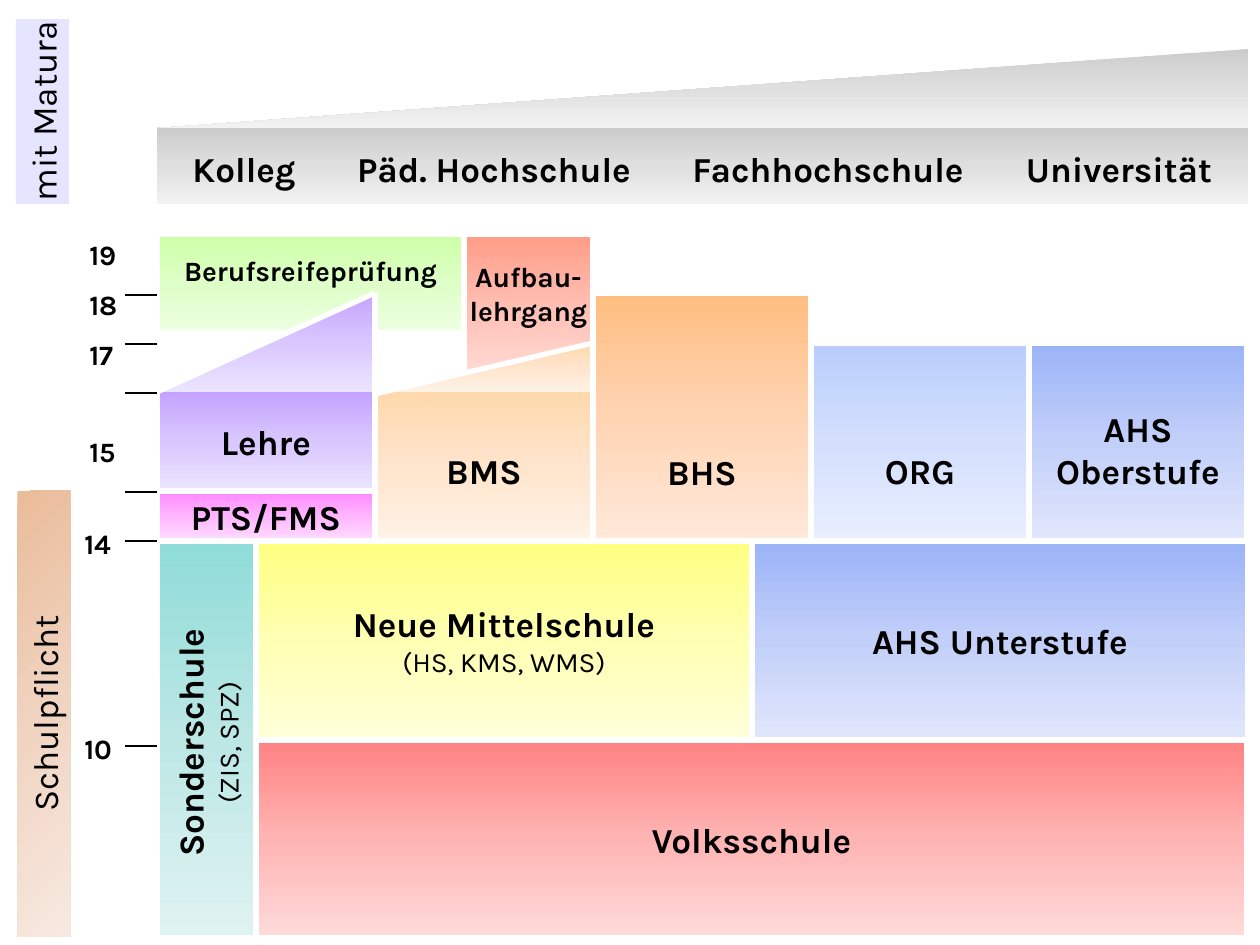
"""Build a one-slide diagram of the Austrian school system."""
from copy import deepcopy
from dataclasses import dataclass

from pptx import Presentation
from pptx import util as u
from pptx.dml import color
from pptx.enum import shapes, text
from pptx.oxml import ns, xmlchemy

SCALE = 914400 / 126
RECT = shapes.MSO_SHAPE.RECTANGLE
TRIANGLE = shapes.MSO_SHAPE.RIGHT_TRIANGLE
TOP, MIDDLE, BOTTOM = text.MSO_ANCHOR.TOP, text.MSO_ANCHOR.MIDDLE, text.MSO_ANCHOR.BOTTOM
LEFT, CENTER = text.PP_ALIGN.LEFT, text.PP_ALIGN.CENTER


@dataclass(frozen=True)
class Theme:
    font: str = "Karla"
    large: int = 20
    small: int = 16
    ink: str = "000000"
    gap: str = "FFFFFF"
    gap_width: float = 3
    tick_width: float = 0.75
    lavender: tuple = ("E5E5FF",)
    grey: tuple = ("CCCCCC", "DFDFDF", "F2F2F2")
    green: tuple = ("CCFFA6", "DEFFC7", "EEFFE3")
    coral: tuple = ("FF9C86", "FFC2B7", "FFE1DC")
    pink: tuple = ("FF85FF", "FFB6FF", "FFDCFF")
    violet: tuple = ("C4A3FF", "D9C7FF", "ECE4FF")
    orange: tuple = ("FFBD80", "FFD4B3", "FFE9DA")
    peach: tuple = ("FFD8AD", "FFE5CD", "FFF2E6")
    blue: tuple = ("9BB3F7", "C2CFF9", "E1E7FB")
    sky: tuple = ("B9CEFC", "D3DFFD", "E9EFFE")
    tan: tuple = ("EABB99", "F0D4C1", "F7E9E1")
    teal: tuple = ("8FDCD8", "BCE7E5", "DFF3F2")
    red: tuple = ("FF8282", "FFB4B4", "FFDADA")
    yellow: tuple = ("FFFF80", "FFFFB3", "FFFFDA")


T = Theme()


@dataclass(frozen=True)
class Block:
    x: int
    y: int
    w: int
    h: int
    fill: tuple
    title: str = ""
    note: str = ""
    size: int = T.large
    bold: bool = True
    anchor: text.MSO_ANCHOR = MIDDLE
    inset: int = 6
    border: bool = True
    kind: shapes.MSO_SHAPE = RECT
    turn: int = 0
    angle: int = 270
    upward: bool = False


@dataclass(frozen=True)
class Label:
    x: int
    y: int
    w: int
    title: str
    size: int = T.small
    align: text.PP_ALIGN = LEFT


def px(n: float) -> u.Emu:
    """Turn pixels into EMU."""
    return u.Emu(round(n * SCALE))


def rgb(value: str) -> color.RGBColor:
    """Turn a hex string into a colour."""
    return color.RGBColor.from_string(value)


def paint(sp, colors: tuple, angle: int) -> None:
    """Fill a shape with one colour or a three-stop gradient."""
    if len(colors) == 1:
        sp.fill.solid()
        sp.fill.fore_color.rgb = rgb(colors[0])
        return
    sp.fill.gradient()
    sp.fill.gradient_angle = angle
    stops = next(sp._element.iter(ns.qn("a:gsLst")))
    stops.insert(1, deepcopy(stops[0]))
    for stop, value, position in zip(sp.fill.gradient_stops, colors, (0, 0.5, 1)):
        stop.color.rgb = rgb(value)
        stop.position = position


def style(p, size: int, bold: bool, align: text.PP_ALIGN) -> None:
    """Format a paragraph and its runs."""
    p.alignment = align
    for r in p.runs:
        r.font.name = T.font
        r.font.size = u.Pt(size)
        r.font.bold = bold
        r.font.color.rgb = rgb(T.ink)


def draw_block(slide, b: Block) -> None:
    """Draw a school type as a filled shape with its caption."""
    sp = slide.shapes.add_shape(b.kind, px(b.x), px(b.y), px(b.w), px(b.h))
    sp.shadow.inherit = False
    sp.rotation = b.turn
    paint(sp, b.fill, b.angle)
    if b.border:
        sp.line.color.rgb = rgb(T.gap)
        sp.line.width = u.Pt(T.gap_width)
    else:
        sp.line.fill.background()
    if b.kind == TRIANGLE:
        sp._element.spPr.find(ns.qn("a:xfrm")).set("flipH", "1")
    if not b.title:
        return
    tf = sp.text_frame
    tf.word_wrap = False
    tf.vertical_anchor = b.anchor
    if b.anchor == TOP:
        tf.margin_top = px(b.inset)
    else:
        tf.margin_bottom = px(b.inset)
    if b.upward:
        tf._txBody.bodyPr.set("vert", "vert270")
    tf.text = b.title
    for p in tf.paragraphs:
        style(p, b.size, b.bold, CENTER)
    if b.note:
        p = tf.add_paragraph()
        p.text = b.note
        style(p, T.small, False, CENTER)


def draw_label(slide, label: Label) -> None:
    """Draw a bold one-line label centred on its height."""
    sp = slide.shapes.add_textbox(px(label.x), px(label.y - 24), px(label.w), px(48))
    tf = sp.text_frame
    tf.word_wrap = True
    tf.vertical_anchor = MIDDLE
    tf.text = label.title
    style(tf.paragraphs[0], label.size, True, label.align)


def draw_line(slide, ends: tuple, ink: str, width: float) -> None:
    """Draw a straight line without a shadow."""
    line = slide.shapes.add_connector(shapes.MSO_CONNECTOR.STRAIGHT, *map(px, ends))
    line.line.color.rgb = rgb(ink)
    line.line.width = u.Pt(width)
    line._element.spPr.append(xmlchemy.OxmlElement("a:effectLst"))


COL = 218
C0, C1, C2, C3, C4, C5 = (157 + COL * i for i in range(6))
Y19, Y18, Y17, Y16, Y15, Y14, Y10, Y6 = 234, 293, 343, 392, 491, 541, 740, 938
LOW = dict(anchor=BOTTOM, inset=49)
SIDE = dict(bold=False, border=False, turn=270)
WEDGE = dict(border=False, kind=TRIANGLE)
MIDDLE_X, HALF = 256, 496

BLOCKS = [
    Block(C0, Y19, 307, 99, T.green, "Berufsreifeprüfung", size=T.small, anchor=TOP, inset=20),
    Block(464, Y19, C2 - 464, 159, T.coral, "Aufbau-\nlehrgang", size=T.small, anchor=TOP, inset=26),
    Block(-50, 85, 185, 53, T.lavender, "mit Matura", **SIDE),
    Block(C0, 128, C5 - C0 + 1, 76, T.grey, border=False),
    Block(C0, 49, C5 - C0 + 1, 79, T.grey, **WEDGE),
    Block(C0, Y15, COL, Y14 - Y15, T.pink, "PTS/FMS"),
    Block(C0, Y16, COL, Y15 - Y16, T.violet, "Lehre", border=False),
    Block(C0, Y18, COL, Y16 - Y18, T.violet, **WEDGE),
    Block(C2, Y18, COL, Y14 - Y18, T.orange, "BHS", **LOW),
    Block(C1, Y17, COL, Y16 - Y17, T.peach, **WEDGE),
    Block(C1, Y16, COL, Y14 - Y16, T.peach, "BMS", border=False, **LOW),
    Block(C4, Y17, COL, Y14 - Y17, T.blue, "AHS\nOberstufe", **LOW),
    Block(C3, Y17, COL, Y14 - Y17, T.sky, "ORG", **LOW),
    Block(-179, 687, 446, 53, T.tan, "Schulpflicht", angle=225, **SIDE),
    Block(C0, Y14, MIDDLE_X - C0, Y6 - Y14, T.teal, "Sonderschule", "(ZIS, SPZ)", upward=True),
    Block(MIDDLE_X, Y10, C5 - MIDDLE_X, Y6 - Y10, T.red, "Volksschule"),
    Block(MIDDLE_X + HALF, Y14, HALF, Y10 - Y14, T.blue, "AHS Unterstufe"),
    Block(MIDDLE_X, Y14, HALF, Y10 - Y14, T.yellow, "Neue Mittelschule", "(HS, KMS, WMS)"),
]

GAPS = [
    (C0, Y15, C1, Y15), (C1, Y18, C1, Y14), (C1, Y14, C2, Y14), (C2, Y17, C2, Y14),
    (C1, Y16 + 2, C2, Y17), (C0, Y16, C1, Y18), (C0, Y16, C0, Y15),
]

TICKS = (295, 344, 393, 492, 541, 746)

LABELS = [
    *(Label(77, y, 63, age) for age, y in (("19", 254), ("18", 304), ("17", 354), ("15", 451))),
    *(Label(72, y, 63, age) for age, y in (("14", 543), ("10", 748))),
    *(Label(x - 160, 168, 320, name, T.large, CENTER) for name, x in (
        ("Kolleg", 244), ("Päd. Hochschule", 494), ("Fachhochschule", 828), ("Universität", 1119))),
]


def main() -> None:
    """Build and save the slide."""
    prs = Presentation()
    prs.slide_width, prs.slide_height = px(1260), px(945)
    s = prs.slides.add_slide(prs.slide_layouts[6])
    for block in BLOCKS:
        draw_block(s, block)
    for ends in GAPS:
        draw_line(s, ends, T.gap, T.gap_width)
    for y in TICKS:
        draw_line(s, (125, y, C0, y), T.ink, T.tick_width)
    for label in LABELS:
        draw_label(s, label)
    prs.save("out.pptx")


if __name__ == "__main__":
    main()
